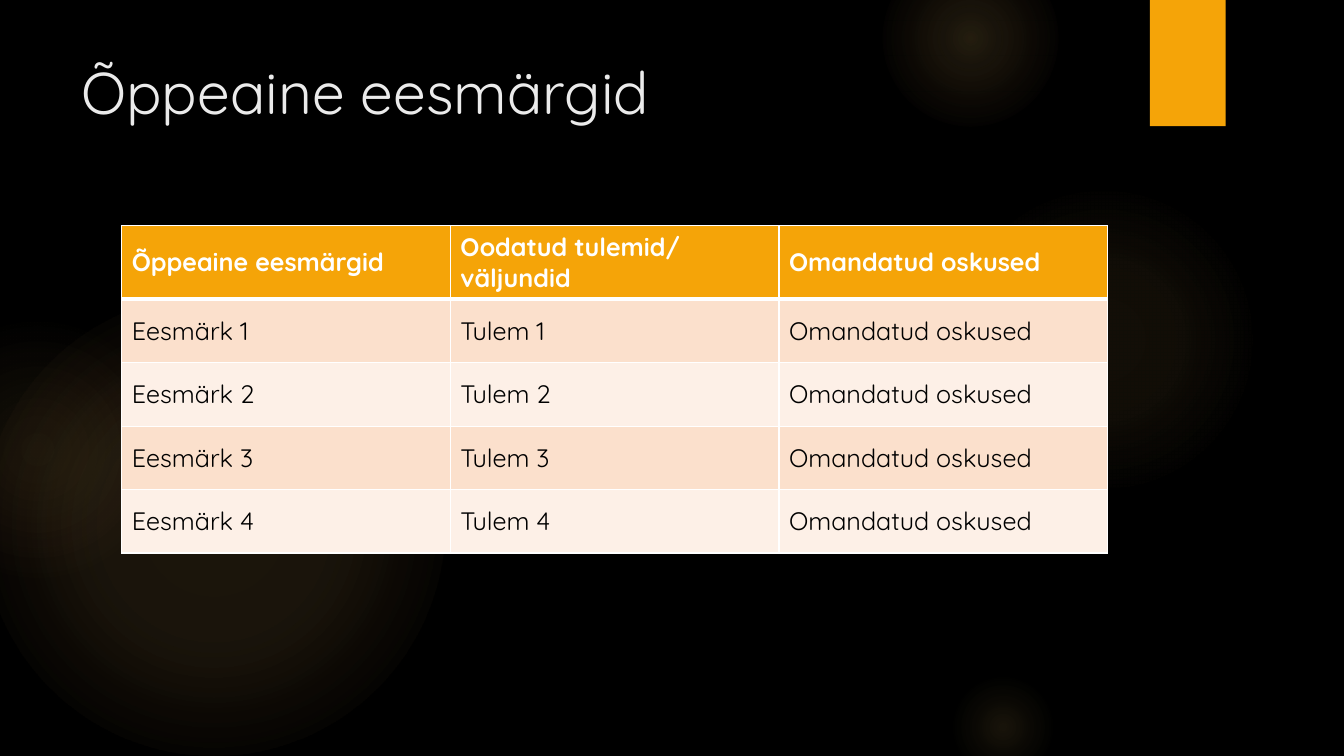
"""Build the course objectives slide with its table of goals, outcomes and skills."""
import pptx
import pptx.dml.color
import pptx.enum.shapes
import pptx.enum.text
import pptx.oxml
import pptx.oxml.ns
import pptx.util
from dataclasses import dataclass

Cm = pptx.util.Cm
ShapeKind = pptx.enum.shapes.MSO_SHAPE
Anchor = pptx.enum.text.MSO_ANCHOR


@dataclass(frozen=True)
class Theme:
    font: str = "Quicksand"
    background: str = "000000"
    accent: str = "F5A408"
    glow: str = "FAC96A"
    warm_glow: str = "F59B74"
    title: str = "EBEBEB"
    white: str = "FFFFFF"
    ink: str = "000000"
    bands: tuple = ("FBE0CC", "FDF0E7")
    title_size: int = 42
    table_size: int = 18


theme = Theme()


def write_text(frame, text, *, size, color, bold=False):
    para = frame.paragraphs[0]
    para.alignment = pptx.enum.text.PP_ALIGN.LEFT
    span = para.add_run()
    span.text = text
    span.font.name = theme.font
    span.font.size = pptx.util.Pt(size)
    span.font.bold = bold
    span.font.color.rgb = pptx.dml.color.RGBColor.from_string(color)


def paint(fill, color):
    fill.solid()
    fill.fore_color.rgb = pptx.dml.color.RGBColor.from_string(color)


deck = pptx.Presentation()
deck.slide_width, deck.slide_height = Cm(33.87), Cm(19.05)
page = deck.slides.add_slide(deck.slide_layouts[5])
paint(page.background.fill, theme.background)
namespace = pptx.oxml.ns.nsdecls("a")

glows = [
    (-0.43, 7.42, 11.63, (11, 10), 75, theme.glow),
    (-2.34, 8.05, 6.55, (8, 5), 71, theme.warm_glow),
    (23.9, 4.65, 7.82, (7, 6), 69, theme.glow),
    (22.23, -1.27, 4.45, (14, 7), 73, theme.glow),
    (23.9, 16.94, 2.74, (10, 5), 66, theme.glow),
]
for left, top, diameter, (center, middle), edge, edge_color in glows:
    circle = page.shapes.add_shape(
        ShapeKind.OVAL, Cm(left), Cm(top), Cm(diameter), Cm(diameter))
    circle.shadow.inherit = False
    circle.line.fill.background()
    middle_stop = 31 if diameter < 3 else 36
    stops = [(0, theme.glow, center), (middle_stop, theme.glow, middle), (edge, edge_color, 0)]
    stop_xml = "".join(
        f'<a:gs pos="{position * 1000}"><a:srgbClr val="{color}">'
        f'<a:alpha val="{opacity * 1000}"/></a:srgbClr></a:gs>'
        for position, color, opacity in stops)
    gradient = pptx.oxml.parse_xml(
        f'<a:gradFill {namespace} rotWithShape="1"><a:gsLst>{stop_xml}</a:gsLst>'
        '<a:path path="circle"><a:fillToRect l="50000" t="50000" r="50000" b="50000"/>'
        '</a:path></a:gradFill>')
    circle._element.spPr.find(pptx.oxml.ns.qn("a:prstGeom")).addnext(gradient)

ribbon = page.shapes.add_shape(ShapeKind.RECTANGLE, Cm(28.98), 0, Cm(1.91), Cm(3.18))
ribbon.shadow.inherit = False
ribbon.line.fill.background()
paint(ribbon.fill, theme.accent)

title = page.shapes.title
title.left, title.top, title.width, title.height = Cm(1.8), Cm(1.27), Cm(26.14), Cm(3.89)
title.text_frame.vertical_anchor = Anchor.TOP
write_text(title.text_frame, "Õppeaine eesmärgid", size=theme.title_size, color=theme.title)

rows = [("Õppeaine eesmärgid", "Oodatud tulemid/ väljundid", "Omandatud oskused")]
rows += [(f"Eesmärk {number}", f"Tulem {number}", "Omandatud oskused") for number in range(1, 5)]

table = page.shapes.add_table(
    len(rows), 3, Cm(3.07), Cm(5.69), Cm(24.84), Cm(8)).table
table.horz_banding = False
for column in table.columns:
    column.width = Cm(8.28)
for row in table.rows:
    row.height = Cm(1.6)

for row_index, labels in enumerate(rows):
    header = row_index == 0
    for column_index, label in enumerate(labels):
        cell = table.cell(row_index, column_index)
        cell.vertical_anchor = Anchor.MIDDLE
        write_text(cell.text_frame, label, size=theme.table_size,
                   color=theme.white if header else theme.ink, bold=header)
        paint(cell.fill, theme.accent if header else theme.bands[(row_index - 1) % 2])
        properties = cell._tc.get_or_add_tcPr()
        for position, side in enumerate(("lnL", "lnR", "lnT", "lnB")):
            thick = (row_index, side) in ((0, "lnB"), (1, "lnT"))
            border = pptx.oxml.parse_xml(
                f'<a:{side} {namespace} w="{pptx.util.Pt(3 if thick else 1)}"><a:solidFill>'
                f'<a:srgbClr val="{theme.white}"/></a:solidFill></a:{side}>')
            properties.insert(position, border)

deck.save("out.pptx")
